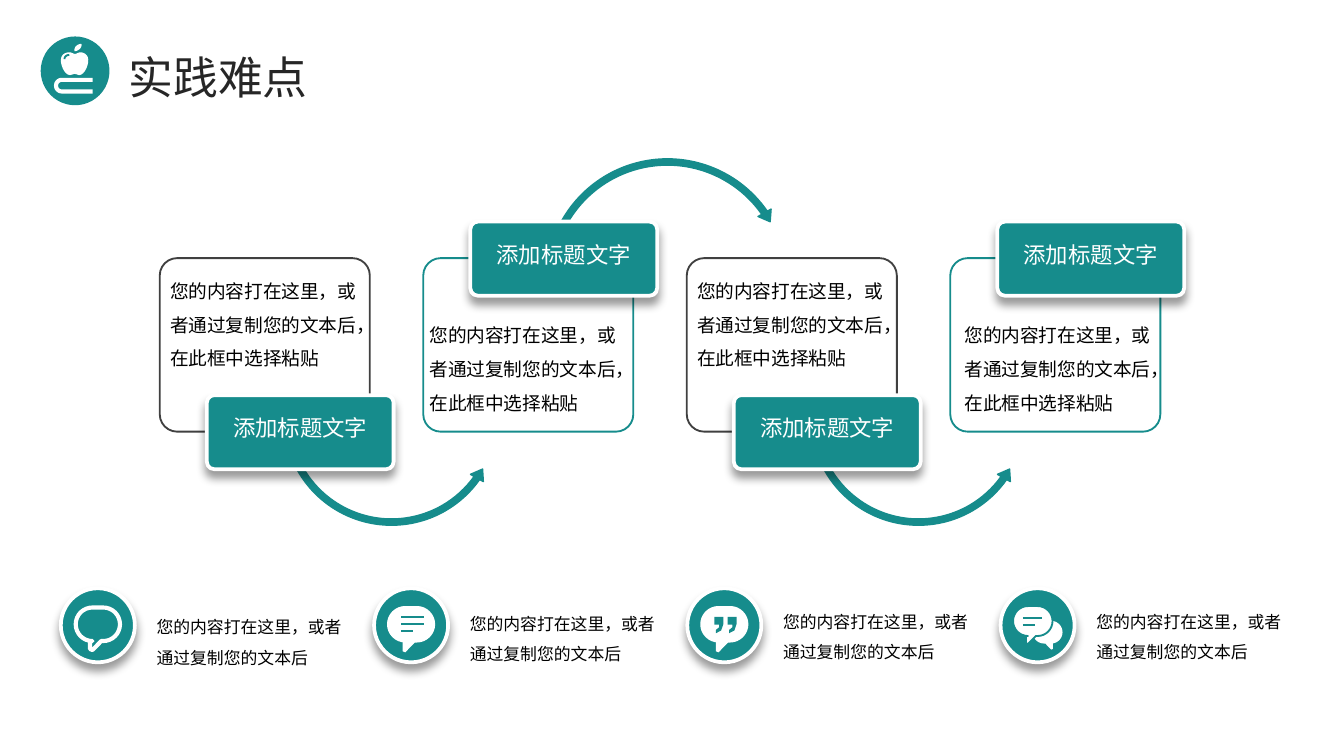
import math

from lxml import etree
from pptx import Presentation
from pptx import util as u
from pptx.dml.color import RGBColor
from pptx.enum import shapes, text
from pptx.oxml import ns

Cm = u.Cm
KIND = shapes.MSO_SHAPE
FONT = "Noto Sans CJK SC"
COLORS = {"teal": "168C8C", "white": "FFFFFF", "gray": "404040",
          "title": "262626", "black": "000000"}

HEADING = "添加标题文字"
CARD_BODY = "您的内容打在这里，或者通过复制您的文本后，在此框中选择粘贴"
NOTE_BODY = "您的内容打在这里，或者通过复制您的文本后"

CARD_LEFT, CARD_STEP = 3.02, 4.98
NOTE_LEFT, NOTE_STEP, BADGE = 1.15, 5.92, 1.4


def rgb(name):
    return RGBColor.from_string(COLORS[name])


def paint(shape, fill=None, line=None, width=1):
    shape.shadow.inherit = False
    if fill:
        shape.fill.solid()
        shape.fill.fore_color.rgb = rgb(fill)
    else:
        shape.fill.background()
    if line:
        shape.line.color.rgb = rgb(line)
        shape.line.width = u.Pt(width)
    else:
        shape.line.fill.background()
    return shape


def add_preset(slide, kind, box, **style):
    shape = slide.shapes.add_shape(kind, *map(Cm, box))
    return paint(shape, **style)


def add_drop_shadow(shape):
    effects = shape._element.spPr.find(ns.qn("a:effectLst"))
    shadow = etree.SubElement(effects, ns.qn("a:outerShdw"), blurRad=str(u.Pt(5)),
                              dist=str(u.Pt(4)), dir="5400000", rotWithShape="0")
    color = etree.SubElement(shadow, ns.qn("a:srgbClr"), val=COLORS["black"])
    etree.SubElement(color, ns.qn("a:alpha"), val="40000")


def add_outline(slide, points, closed=True, **style):
    start, *rest = [(Cm(x), Cm(y)) for x, y in points]
    builder = slide.shapes.build_freeform(*start)
    builder.add_line_segments(rest, close=closed)
    return paint(builder.convert_to_shape(), **style)


def add_rule(slide, x1, x2, y):
    rule = slide.shapes.add_connector(shapes.MSO_CONNECTOR.STRAIGHT,
                                      Cm(x1), Cm(y), Cm(x2), Cm(y))
    rule.line.color.rgb = rgb("teal")
    rule.line.width = u.Pt(1)
    etree.SubElement(rule._element.spPr, ns.qn("a:effectLst"))


def write(shape, words, size, color="black", spacing=1.0, centred=False, margins=None):
    frame = shape.text_frame
    frame.word_wrap = True
    frame.vertical_anchor = text.MSO_ANCHOR.MIDDLE if centred else text.MSO_ANCHOR.TOP
    if margins:
        (frame.margin_left, frame.margin_top,
         frame.margin_right, frame.margin_bottom) = map(Cm, margins)
    paragraph = frame.paragraphs[0]
    paragraph.text = words
    paragraph.alignment = text.PP_ALIGN.CENTER if centred else text.PP_ALIGN.LEFT
    paragraph.line_spacing = spacing
    paragraph.font.size = u.Pt(size)
    paragraph.font.color.rgb = rgb(color)
    paragraph.font.name = FONT
    # East Asian glyphs take their typeface from a:ea
    defaults = paragraph._p.pPr.find(ns.qn("a:defRPr"))
    etree.SubElement(defaults, ns.qn("a:ea"), typeface=FONT)


def add_text(slide, box, words, size, **style):
    write(slide.shapes.add_textbox(*map(Cm, box)), words, size, **style)


def arc(cx, cy, radius, start, end, steps=16):
    angles = [math.radians(start + (end - start) * i / steps) for i in range(steps + 1)]
    return [(cx + radius * math.cos(a), cy + radius * math.sin(a)) for a in angles]


def curve(start, *segments, steps=8):
    """Points along a chain of cubic Bezier segments."""
    points = [start]
    for b, c, d in segments:
        a = points[-1]
        for t in (i / steps for i in range(1, steps + 1)):
            weights = ((1 - t) ** 3, 3 * t * (1 - t) ** 2, 3 * t * t * (1 - t), t ** 3)
            points.append(tuple(sum(w * p[axis] for w, p in zip(weights, (a, b, c, d)))
                                for axis in (0, 1)))
    return points


def add_bubble(slide, cx, cy, scale=1.0, flip=1, **style):
    radius, half = 0.345, 0.11
    tail = [(0.07, radius), (-0.11, 0.53), (-0.16, 0.51), (-0.16, radius)]
    points = (arc(half, 0, radius, -90, 90) + tail + arc(-half, 0, radius, 90, 270))
    add_outline(slide, [(cx + flip * scale * x, cy + scale * y) for x, y in points], **style)


def add_title(slide):
    add_preset(slide, KIND.OVAL, (0.77, 0.69, 1.3, 1.3), fill="teal")
    # Book
    book = [(1.75, 1.51)] + arc(1.17, 1.62, 0.11, 270, 90) + [(1.75, 1.73)]
    add_outline(slide, book, closed=False, line="white", width=2.2)
    # Apple: body, leaf and highlight
    body = curve((1.42, 1.02),
                 ((1.45, 1.02), (1.48, 0.99), (1.52, 0.99)),
                 ((1.56, 0.99), (1.63, 1.01), (1.66, 1.08)),
                 ((1.7, 1.2), (1.6, 1.42), (1.5, 1.42)),
                 ((1.47, 1.42), (1.45, 1.4), (1.41, 1.4)),
                 ((1.38, 1.4), (1.35, 1.42), (1.32, 1.42)),
                 ((1.22, 1.42), (1.12, 1.2), (1.16, 1.08)),
                 ((1.19, 1.01), (1.26, 0.99), (1.31, 0.99)),
                 ((1.36, 0.99), (1.38, 1.02), (1.42, 1.02)))
    leaf = curve((1.41, 0.97), ((1.47, 0.97), (1.56, 0.91), (1.54, 0.83)),
                 ((1.47, 0.83), (1.39, 0.89), (1.41, 0.97)))
    for part in (body, leaf):
        add_outline(slide, part, fill="white")
    highlight = curve((1.22, 1.12), ((1.22, 1.07), (1.26, 1.04), (1.31, 1.04)))
    add_outline(slide, highlight, closed=False, line="teal", width=1)
    add_text(slide, (2.18, 0.81, 6.5, 1.27), "实践难点", 24, color="title")


def add_arrows(slide):
    under = (0.028, 3.466, 21.221, 90.245, 0.033)
    over = (0.025, 3.074, 195.171, 125.755, 0.03)
    for kind, left, top, size, bends in (
            (KIND.LEFT_CIRCULAR_ARROW, 5.28, 5.77, 4.24, under),
            (KIND.CIRCULAR_ARROW, 10.24, 2.92, 4.75, over),
            (KIND.LEFT_CIRCULAR_ARROW, 5.28 + 2 * CARD_STEP, 5.77, 4.24, under)):
        arrow = add_preset(slide, kind, (left, top, size, size),
                           fill="teal", line="teal", width=0.75)
        for i, bend in enumerate(bends):
            arrow.adjustments[i] = bend


def add_card(slide, index):
    left = CARD_LEFT + index * CARD_STEP
    heading_on_top = index % 2 == 1
    frame = add_preset(slide, KIND.ROUNDED_RECTANGLE, (left, 4.88, 3.97, 3.28),
                       line="teal" if heading_on_top else "gray")
    heading = add_preset(slide, KIND.ROUNDED_RECTANGLE,
                         (left + 0.89, 4.19 if heading_on_top else 7.47, 3.53, 1.4),
                         fill="teal", line="white", width=2)
    for box in (frame, heading):
        box.adjustments[0] = 0.1
    add_drop_shadow(heading)
    write(heading, HEADING, 12, color="white", spacing=0.9, centred=True,
          margins=(0.18, 0.08, 0.18, 0.18))
    if heading_on_top:
        body_left, width = {1: (7.87, 4.14), 3: (17.98, 4.27)}[index]
        add_text(slide, (body_left, 5.79, width, 2.18), CARD_BODY, 10, spacing=1.5)
    else:
        write(frame, CARD_BODY, 10, spacing=1.5, margins=(0.1, 0.1, 0.1, 0.8))


def add_icon(slide, index, cx, cy):
    if index == 0:  # hollow bubble
        add_bubble(slide, cx, cy - 0.02, 0.92, line="white", width=2.2)
    elif index == 1:  # bubble with lines of text
        add_bubble(slide, cx, cy - 0.02, fill="white")
        for end, y in ((0.24, -0.15), (0.24, -0.03), (0.04, 0.11)):
            add_rule(slide, cx - 0.19, cx + end, cy + y)
    elif index == 2:  # bubble with quotation marks
        add_bubble(slide, cx, cy - 0.02, fill="white")
        mark = [(0, 0), (0.17, 0), (0.17, 0.14), (0.13, 0.26), (0.03, 0.31),
                (0.03, 0.25), (0.09, 0.2), (0.09, 0.15), (0, 0.15)]
        for shift in (-0.19, 0.06):
            add_outline(slide, [(cx + shift + x, cy - 0.16 + y) for x, y in mark],
                        fill="teal")
    else:  # two bubbles
        add_bubble(slide, cx + 0.19, cy + 0.13, 0.62, flip=-1, fill="white")
        add_bubble(slide, cx - 0.09, cy - 0.08, 0.82, fill="white", line="teal")
        for end, y in ((0.09, -0.13), (-0.04, 0)):
            add_rule(slide, cx - 0.28, cx + end, cy + y)


def add_note(slide, index, text_top):
    left, top = NOTE_LEFT + index * NOTE_STEP, 11.12
    badge = add_preset(slide, KIND.OVAL, (left, top, BADGE, BADGE),
                       fill="teal", line="white", width=2)
    add_drop_shadow(badge)
    add_icon(slide, index, left + BADGE / 2, top + BADGE / 2)
    add_text(slide, (left + 1.56, text_top, 4.22, 1.42), NOTE_BODY, 9, spacing=1.5)


def main():
    deck = Presentation()
    deck.slide_width, deck.slide_height = Cm(25.4), Cm(14.29)
    slide = deck.slides.add_slide(deck.slide_layouts[6])
    add_title(slide)
    # Four steps linked by arrows
    add_arrows(slide)
    for index in range(4):
        add_card(slide, index)
    # Notes along the foot
    for index, text_top in enumerate((11.35, 11.28, 11.25, 11.25)):
        add_note(slide, index, text_top)
    deck.save("out.pptx")


if __name__ == "__main__":
    main()
